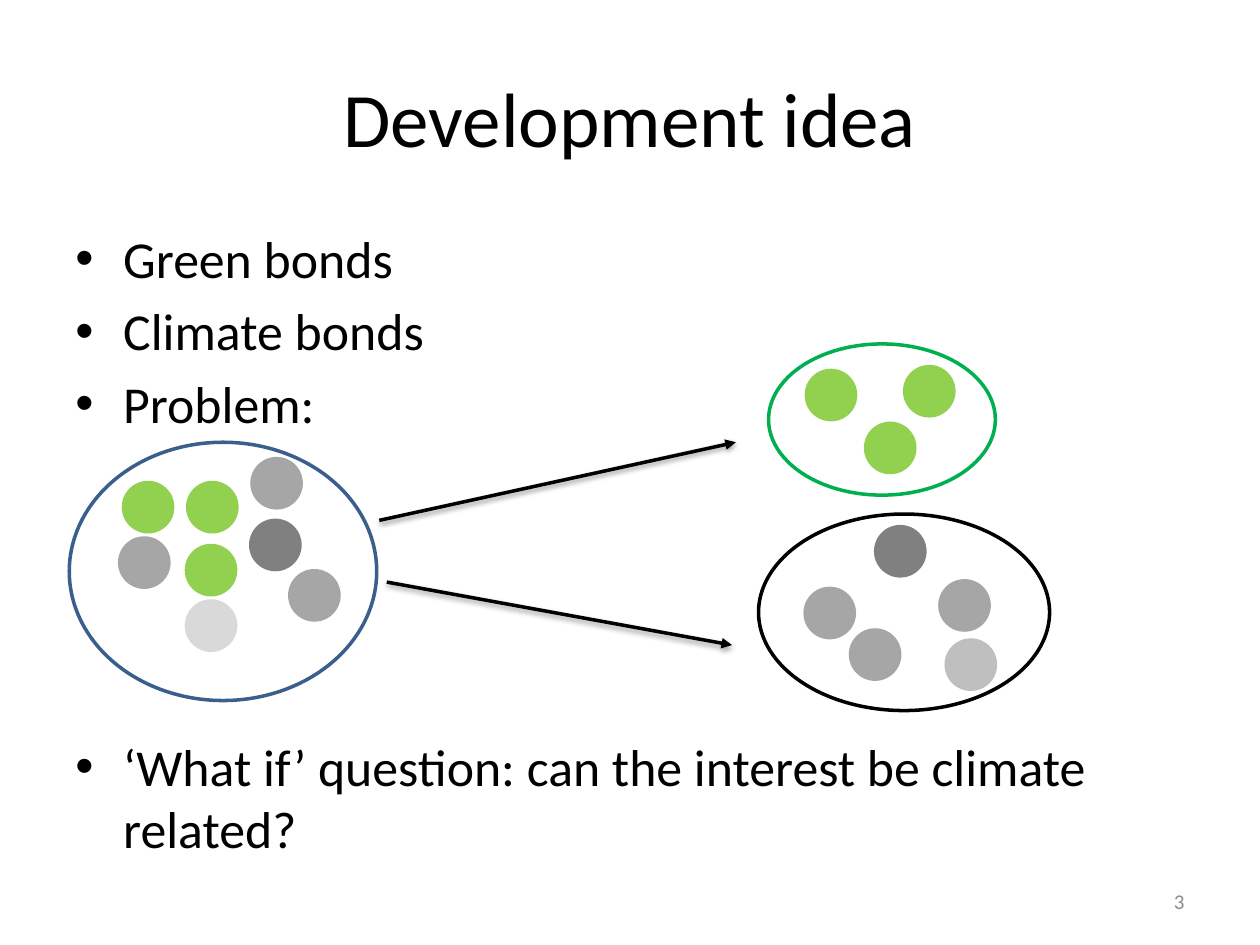
"""Build the "Development idea" slide: mixed bonds sorted into green and other groups."""
from lxml import etree
from pptx import Presentation
from pptx import util as u
from pptx.dml.color import RGBColor
from pptx.enum import shapes, text
from pptx.oxml import parse_xml
from pptx.oxml.ns import nsdecls, qn

GREEN, DARK, GREY, SILVER, PALE = "92D050", "808080", "A6A6A6", "BFBFBF", "D9D9D9"
DOT = 0.39


def color(value):
    return RGBColor.from_string(value)


def add_text(page, place, lines, size, fill, align, anchor):
    box = page.shapes.add_textbox(*[u.Inches(n) for n in place])
    frame = box.text_frame
    frame.word_wrap = True
    frame.vertical_anchor = anchor
    frame.text = "\n".join(lines)
    for para in frame.paragraphs:
        para.alignment = align
        for span in para.runs:
            span.font.name = "Calibri"
            span.font.size = u.Pt(size)
            span.font.color.rgb = color(fill)
    return frame


deck = Presentation()
deck.slide_width, deck.slide_height = u.Inches(10), u.Inches(7.5)
page = deck.slides.add_slide(deck.slide_layouts[6])

align, anchor = text.PP_ALIGN, text.MSO_ANCHOR
add_text(page, (0.5, 0.3, 9, 1.25), ["Development idea"], 44, "000000", align.CENTER, anchor.MIDDLE)
points = ["Green bonds", "Climate bonds", "Problem:",
          "‘What if’ question: can the interest be climate related?"]
body = add_text(page, (0.5, 1.75, 9, 4.95), points, 29.6, "000000", align.LEFT, anchor.TOP)
for para in body.paragraphs:
    para.space_before = u.Pt(5.9)
    props = para._p.get_or_add_pPr()
    props.set("marL", str(u.Inches(0.38)))
    props.set("indent", str(-u.Inches(0.38)))
    etree.SubElement(props, qn("a:buFont")).set("typeface", "Arial")
    etree.SubElement(props, qn("a:buChar")).set("char", "•")
body.paragraphs[-1].space_before = u.Pt(172)
add_text(page, (7.17, 6.95, 2.33, 0.4), ["3"], 12, "8C8C8C", align.RIGHT, anchor.MIDDLE)

groups = [
    ((0.55, 3.51, 2.44, 2.05), "3A5F8C",
     [(0.98, 3.83, GREEN), (1.49, 3.83, GREEN), (1.99, 4.13, DARK), (1.48, 4.33, GREEN),
      (2.3, 4.53, GREY), (2, 3.64, GREY), (0.95, 4.27, GREY), (1.48, 4.77, PALE)]),
    ((6.1, 2.73, 1.8, 1.2), "00B050",
     [(6.4, 2.94, GREEN), (6.87, 3.36, GREEN), (7.18, 2.91, GREEN)]),
    ((6.02, 4.08, 2.31, 1.56), "000000",
     [(6.39, 4.67, GREY), (6.75, 5, GREY), (7.51, 5.08, SILVER), (6.95, 4.18, DARK),
      (7.46, 4.61, GREY)]),
]
for ring, outline, dots in groups:
    ovals = [((left, top, DOT, DOT), fill, fill) for left, top, fill in dots]
    for place, line, fill in ovals + [(ring, outline, None)]:
        oval = page.shapes.add_shape(shapes.MSO_SHAPE.OVAL, *[u.Inches(n) for n in place])
        oval.shadow.inherit = False
        oval.line.color.rgb = color(line)
        oval.line.width = u.Pt(2)
        if fill:
            oval.fill.solid()
            oval.fill.fore_color.rgb = color(fill)
        else:
            oval.fill.background()

for ends in [(3.01, 4.13, 5.84, 3.51), (3.07, 4.62, 5.81, 5.12)]:
    arrow = page.shapes.add_connector(shapes.MSO_CONNECTOR.STRAIGHT, *[u.Inches(n) for n in ends])
    arrow.line.color.rgb = color("000000")
    arrow.line.width = u.Pt(2)
    etree.SubElement(arrow.line._get_or_add_ln(), qn("a:tailEnd")).set("type", "triangle")
    arrow._element.spPr.append(parse_xml(
        f'<a:effectLst {nsdecls("a")}><a:outerShdw blurRad="{u.Pt(3.1)}" dist="{u.Pt(1.6)}" '
        'dir="5400000" rotWithShape="0"><a:srgbClr val="000000"><a:alpha val="38000"/>'
        '</a:srgbClr></a:outerShdw></a:effectLst>'))

deck.save("out.pptx")
